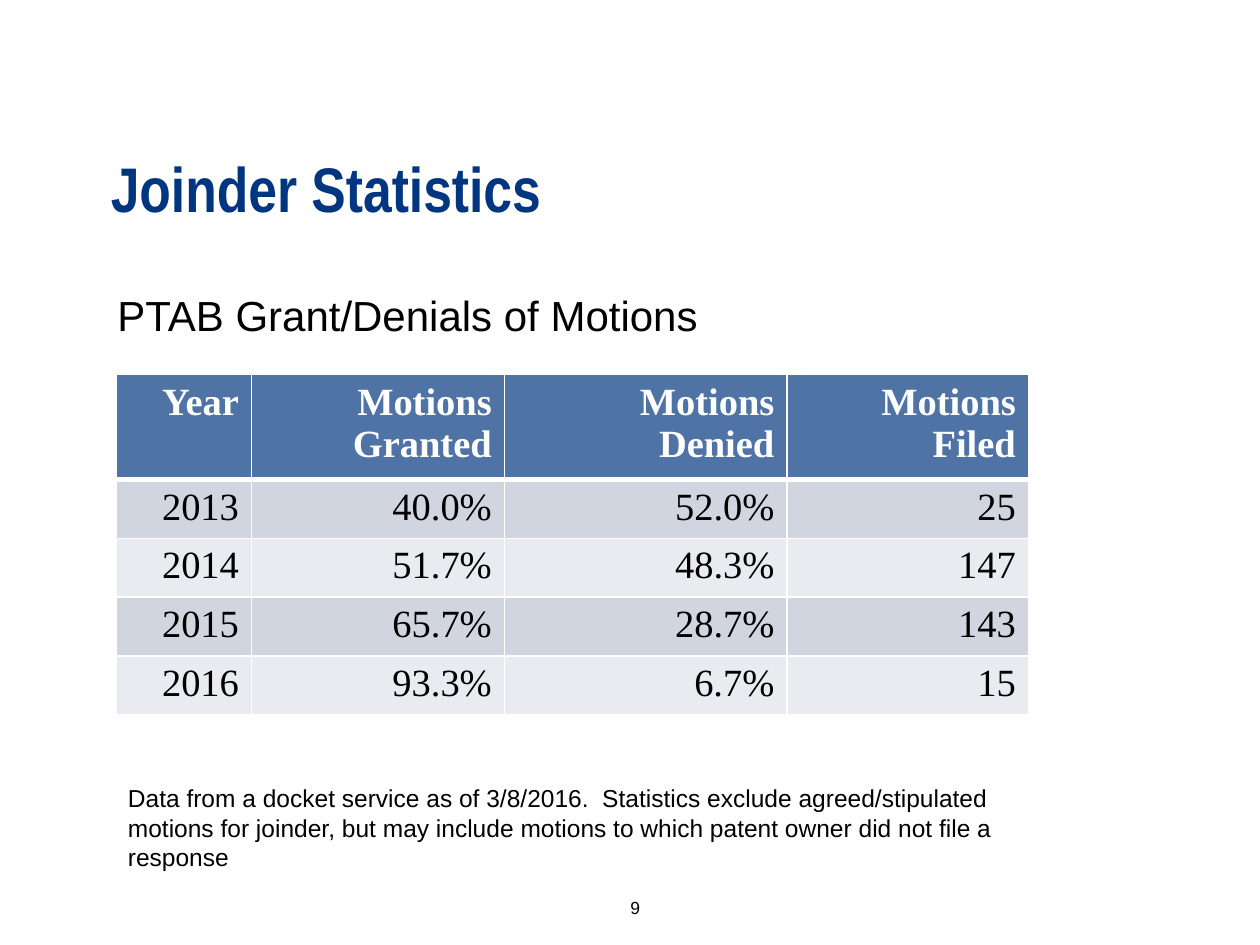
from lxml import etree
from pptx import Presentation
from pptx.dml.color import RGBColor
from pptx.enum.text import MSO_ANCHOR, PP_ALIGN
from pptx.oxml.ns import qn
from pptx.util import Pt

TOP, BOTTOM = MSO_ANCHOR.TOP, MSO_ANCHOR.BOTTOM
LEFT, CENTER, RIGHT = PP_ALIGN.LEFT, PP_ALIGN.CENTER, PP_ALIGN.RIGHT

HEX = {
    "navy": "003580",
    "black": "000000",
    "white": "FFFFFF",
    "head": "4E73A4",
    "odd": "D0D5E0",
    "even": "E9EBF0",
}


def style(par, align, color, **form):
    par.alignment = align
    font = par.runs[0].font
    font.color.rgb = RGBColor.from_string(HEX[color])
    for key, val in form.items():
        setattr(font, key, val)


def edge(cell, side, width):
    line = etree.SubElement(cell._tc.get_or_add_tcPr(), qn(f"a:ln{side}"), w=str(Pt(width)))
    fill = etree.SubElement(line, qn("a:solidFill"))
    etree.SubElement(fill, qn("a:srgbClr"), val=HEX["white"])


prs = Presentation()
prs.slide_width, prs.slide_height = Pt(720), Pt(540)
slide = prs.slides.add_slide(prs.slide_layouts[6])

# Title, subtitle, source note and page number
note = (
    "Data from a docket service as of 3/8/2016.  Statistics exclude agreed/stipulated "
    "motions for joinder, but may include motions to which patent owner did not file a response"
)
texts = [
    ("Joinder Statistics", (56.2, 36.7, 600, 95.8), BOTTOM, LEFT, "navy",
     dict(name="Arial Narrow", size=Pt(36), bold=True), 0.9),
    ("PTAB Grant/Denials of Motions", (60, 162, 582, 36), TOP, LEFT, "black",
     dict(name="Arial", size=Pt(24)), 1),
    (note, (66, 444, 528, 58), TOP, LEFT, "black",
     dict(name="Arial", size=Pt(14)), 1),
    ("9", (288, 492, 150, 36), BOTTOM, CENTER, "black",
     dict(name="Arial", size=Pt(10)), 1),
]
for text, spot, anchor, align, color, form, space in texts:
    frame = slide.shapes.add_textbox(*map(Pt, spot)).text_frame
    frame.word_wrap = True
    frame.vertical_anchor = anchor
    frame.text = text
    par = frame.paragraphs[0]
    par.line_spacing = space
    style(par, align, color, **form)

# Motions table
rows = [
    ("Year", "Motions Granted", "Motions Denied", "Motions Filed"),
    ("2013", "40.0%", "52.0%", "25"),
    ("2014", "51.7%", "48.3%", "147"),
    ("2015", "65.7%", "28.7%", "143"),
    ("2016", "93.3%", "6.7%", "15"),
]
widths = [77.5, 144.5, 161.5, 138]
heights = [56] + [31.5] * 4
table = slide.shapes.add_table(
    len(rows), len(widths), Pt(66.2), Pt(214), Pt(sum(widths)), Pt(sum(heights))
).table
for col, width in zip(table.columns, widths):
    col.width = Pt(width)
for r, row in enumerate(rows):
    table.rows[r].height = Pt(heights[r])
    head = r == 0
    shade = "head" if head else "odd" if r % 2 else "even"
    for c, text in enumerate(row):
        cell = table.cell(r, c)
        cell.text = text
        style(cell.text_frame.paragraphs[0], RIGHT, "white" if head else "black",
              name="Times New Roman", size=Pt(22), bold=head)
        for side in "LRTB":
            thick = (side == "B" and head) or (side == "T" and r == 1)
            edge(cell, side, 3 if thick else 1)
        cell.fill.solid()
        cell.fill.fore_color.rgb = RGBColor.from_string(HEX[shade])

prs.save("out.pptx")
